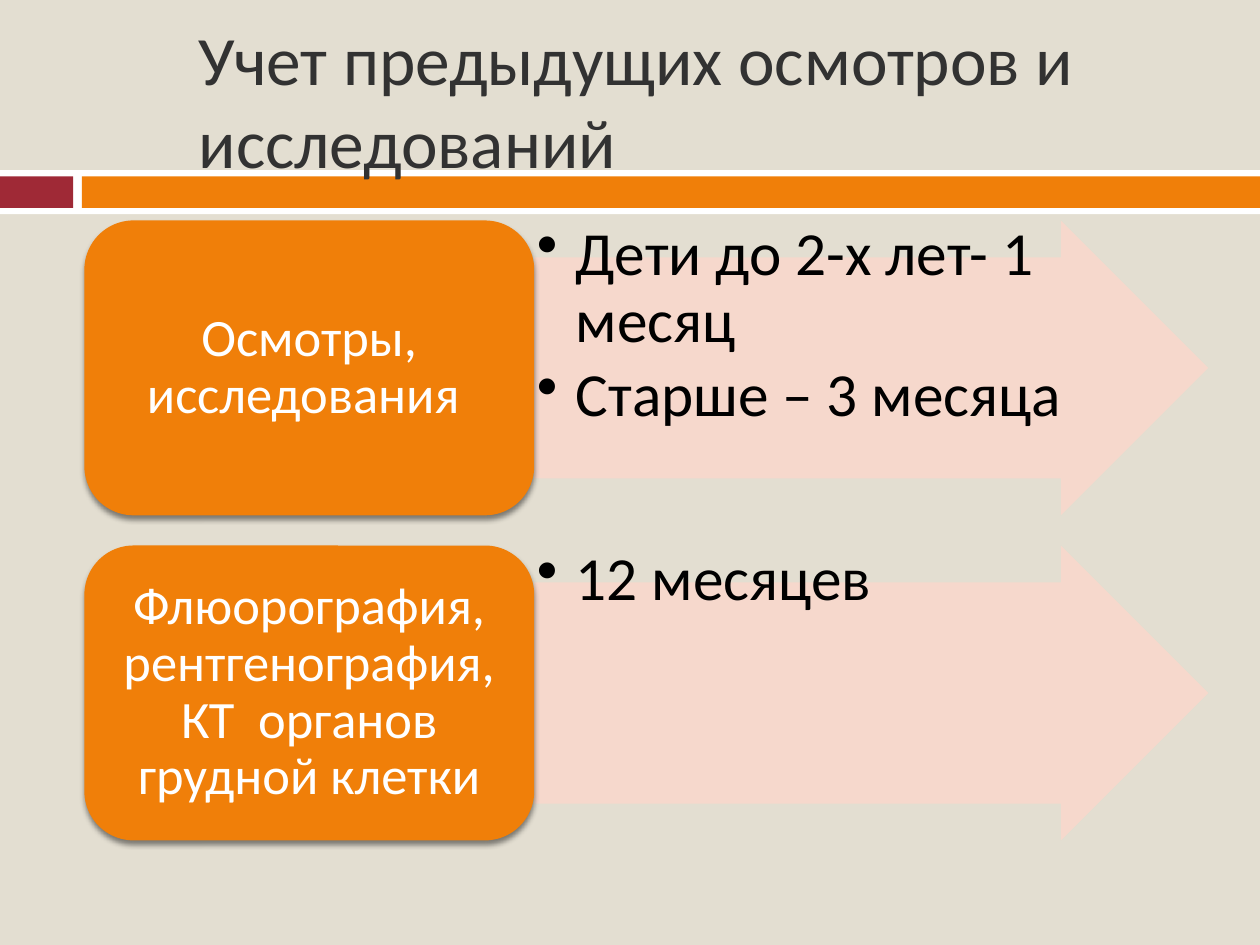
"""Builds a slide on how long earlier examinations stay valid."""
from lxml import etree
from pptx import Presentation
from pptx import util as u
from pptx.dml.color import RGBColor
from pptx.enum import shapes, text
from pptx.oxml import parse_xml
from pptx.oxml.ns import nsdecls, qn

ORANGE = "F07F09"
ROWS = [
    ("Осмотры, исследования ", ["Дети до 2-х лет- 1 месяц", "Старше – 3 месяца"]),
    ("Флюорография, рентгенография, КТ  органов грудной клетки", ["12 месяцев"]),
]
TOP, PITCH, HEIGHT = 1.75, 2.58, 2.34
LABEL_LEFT, LABEL_WIDTH, ARROW_WIDTH = 0.67, 3.57, 5.35
ARROW_LEFT = LABEL_LEFT + LABEL_WIDTH
SHADOW = (
    f'<a:effectLst {nsdecls("a")}><a:outerShdw blurRad="{u.Pt(3)}" dist="{u.Pt(2.4)}" '
    'dir="5400000" rotWithShape="0"><a:srgbClr val="000000"><a:alpha val="45000"/>'
    '</a:srgbClr></a:outerShdw></a:effectLst>'
)


def add_block(kind, left, top, width, height, color):
    block = page.shapes.add_shape(kind, *map(u.Inches, (left, top, width, height)))
    block.shadow.inherit = False
    block.fill.solid()
    block.fill.fore_color.rgb = RGBColor.from_string(color)
    block.line.fill.background()
    return block


def write(box, lines, size, color, anchor, inset, align, spacing):
    frame = box.text_frame
    frame.word_wrap = True
    frame.vertical_anchor = anchor
    frame.margin_left = frame.margin_right = u.Inches(inset)
    frame.margin_top = frame.margin_bottom = u.Inches(min(inset, 0.05))
    frame.text = "\n".join(lines)
    for para in frame.paragraphs:
        para.alignment = align
        para.line_spacing = spacing
        para.font.name = "Calibri"
        para.font.size = u.Pt(size)
        para.font.color.rgb = RGBColor.from_string(color)
    return frame.paragraphs


deck = Presentation()
deck.slide_width, deck.slide_height = u.Inches(10), u.Inches(7.5)
page = deck.slides.add_slide(deck.slide_layouts[6])
page.background.fill.solid()
page.background.fill.fore_color.rgb = RGBColor.from_string("E3DED1")

for left, top, width, height, color in [
    (0, 1.35, 10, 0.35, "FFFFFF"),
    (0, 1.4, 0.58, 0.25, "9F2936"),
    (0.65, 1.4, 9.35, 0.25, ORANGE),
]:
    add_block(shapes.MSO_SHAPE.RECTANGLE, left, top, width, height, color)

title = page.shapes.add_textbox(*map(u.Inches, (1.48, 0.25, 8.1, 1.08)))
write(title, ["Учет предыдущих осмотров и исследований"], 39.6, "323232",
      text.MSO_ANCHOR.MIDDLE, 0.1, text.PP_ALIGN.LEFT, 1.0)

for index, (label_text, periods) in enumerate(ROWS):
    top = TOP + index * PITCH
    arrow = add_block(shapes.MSO_SHAPE.RIGHT_ARROW, ARROW_LEFT, top, ARROW_WIDTH, HEIGHT, "F9D8CC")
    arrow.adjustments[0] = 0.75
    arrow_color = arrow.fill._xPr.find(qn("a:solidFill"))[0]
    etree.SubElement(arrow_color, qn("a:alpha"), val="90000")

    period_box = page.shapes.add_textbox(*map(u.Inches, (ARROW_LEFT, top, ARROW_WIDTH, HEIGHT)))
    for para in write(period_box, periods, 35, "000000", text.MSO_ANCHOR.TOP, 0.02,
                      text.PP_ALIGN.LEFT, 0.9):
        para.space_after = u.Pt(5)
        props = para._p.get_or_add_pPr()
        props.set("marL", str(u.Inches(0.31)))
        props.set("indent", str(-u.Inches(0.31)))
        bullet = parse_xml(f'<a:buChar {nsdecls("a")} char="•"/>')
        props.find(qn("a:defRPr")).addprevious(bullet)

    label = add_block(shapes.MSO_SHAPE.ROUNDED_RECTANGLE, LABEL_LEFT, top, LABEL_WIDTH, HEIGHT, ORANGE)
    label._element.spPr.replace(label._element.spPr.find(qn("a:effectLst")), parse_xml(SHADOW))
    write(label, [label_text], 30, "FFFFFF", text.MSO_ANCHOR.MIDDLE, 0.01,
          text.PP_ALIGN.CENTER, 0.9)

deck.save("out.pptx")
